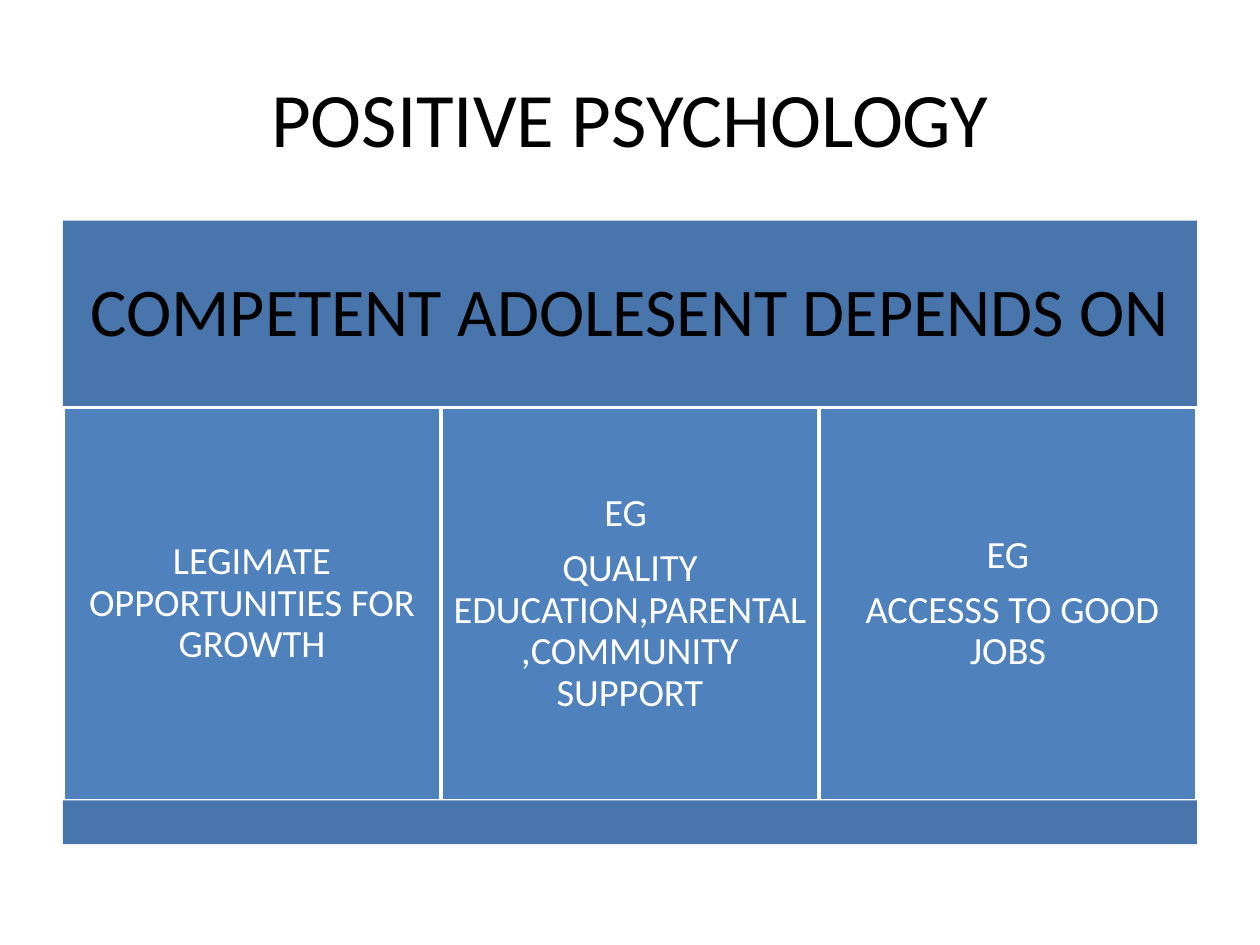
from pptx import Presentation
from pptx.dml.color import RGBColor
from pptx.enum import shapes, text
from pptx.util import Pt

BLACK = RGBColor(0x00, 0x00, 0x00)
WHITE = RGBColor(0xFF, 0xFF, 0xFF)
BAND_BLUE = RGBColor(0x48, 0x75, 0xAC)
COLUMN_BLUE = RGBColor(0x4F, 0x81, 0xBD)
FONT = "Calibri"

COLUMNS = [
    ["LEGIMATE OPPORTUNITIES FOR GROWTH"],
    ["EG ", "QUALITY EDUCATION,PARENTAL ,COMMUNITY SUPPORT"],
    ["EG", " ACCESSS TO GOOD JOBS"],
]


def write_centred(shape, lines, size, color, inset, line_spacing=1.0, space_after=0):
    frame = shape.text_frame
    frame.word_wrap = True
    frame.vertical_anchor = text.MSO_ANCHOR.MIDDLE
    frame.margin_left = frame.margin_right = Pt(inset)
    frame.margin_top = frame.margin_bottom = Pt(inset)
    frame.text = "\n".join(lines)
    for paragraph in frame.paragraphs:
        paragraph.alignment = text.PP_ALIGN.CENTER
        paragraph.line_spacing = line_spacing
        paragraph.space_after = Pt(space_after)
        for run in paragraph.runs:
            run.font.name = FONT
            run.font.size = Pt(size)
            run.font.color.rgb = color


def add_block(slide, left, top, width, height, fill, outline=None):
    block = slide.shapes.add_shape(
        shapes.MSO_SHAPE.RECTANGLE, Pt(left), Pt(top), Pt(width), Pt(height))
    block.shadow.inherit = False
    block.fill.solid()
    block.fill.fore_color.rgb = fill
    if outline is None:
        block.line.fill.background()
    else:
        block.line.color.rgb = outline
        block.line.width = Pt(2)
    return block


def add_title(slide, left, top, width, height):
    title = slide.shapes.add_textbox(Pt(left), Pt(top), Pt(width), Pt(height))
    write_centred(title, ["POSITIVE PSYCHOLOGY"], 44, BLACK, inset=4)


def add_pillars(slide, left, top, width, height):
    """Header band, equal columns and a footer band, stacked in the box."""
    header_height, footer_height = 106.9, 25
    column_height = height - header_height - footer_height
    column_width = width / len(COLUMNS)

    header = add_block(slide, left, top, width, header_height, BAND_BLUE)
    write_centred(header, ["COMPETENT ADOLESENT DEPENDS ON"], 39, BLACK,
                  inset=11.5, line_spacing=0.9)
    for index, lines in enumerate(COLUMNS):
        column = add_block(slide, left + index * column_width, top + header_height,
                           column_width, column_height, COLUMN_BLUE, WHITE)
        write_centred(column, lines, 22, WHITE, inset=6.3,
                      line_spacing=0.9, space_after=7.7)
    add_block(slide, left, top + height - footer_height, width, footer_height, BAND_BLUE)


def main():
    presentation = Presentation()
    presentation.slide_width = Pt(720)
    presentation.slide_height = Pt(540)
    slide = presentation.slides.add_slide(presentation.slide_layouts[6])
    add_title(slide, 36, 21.6, 648, 90)
    add_pillars(slide, 36, 126, 648, 356.4)
    presentation.save("out.pptx")


if __name__ == "__main__":
    main()
